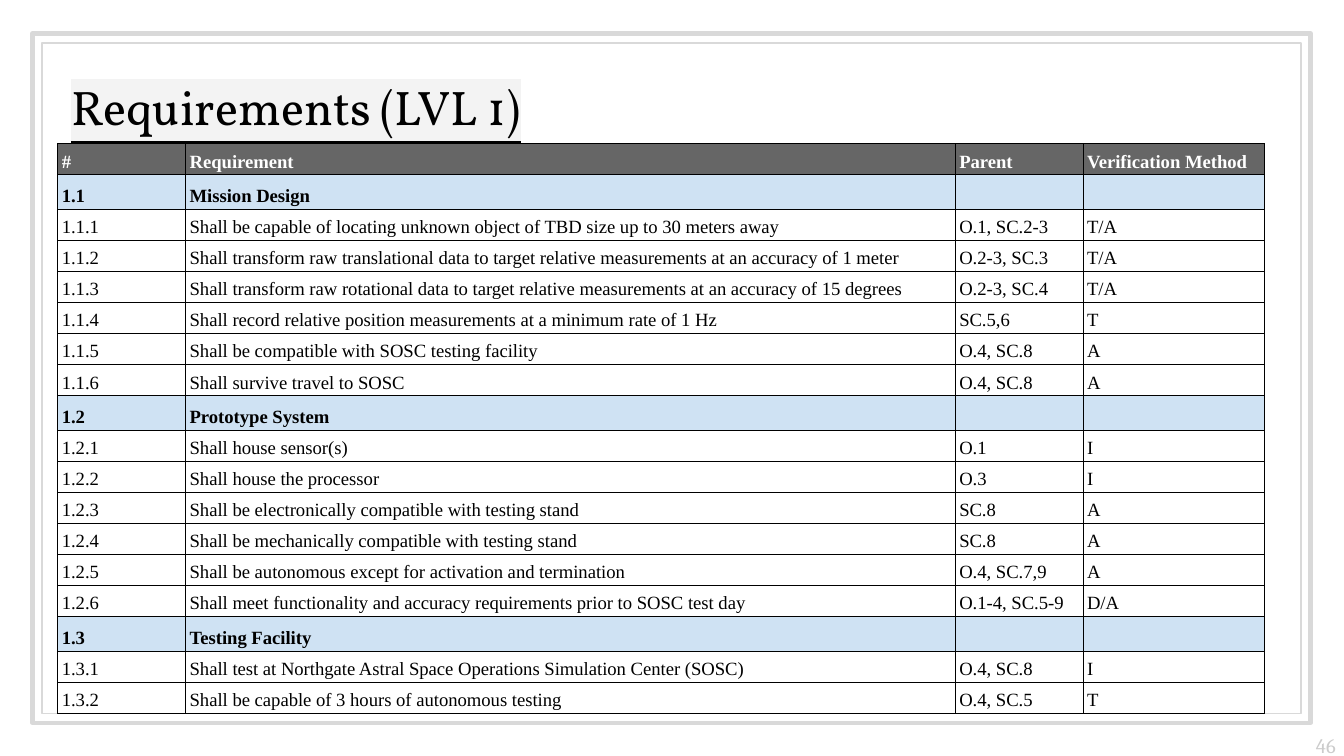
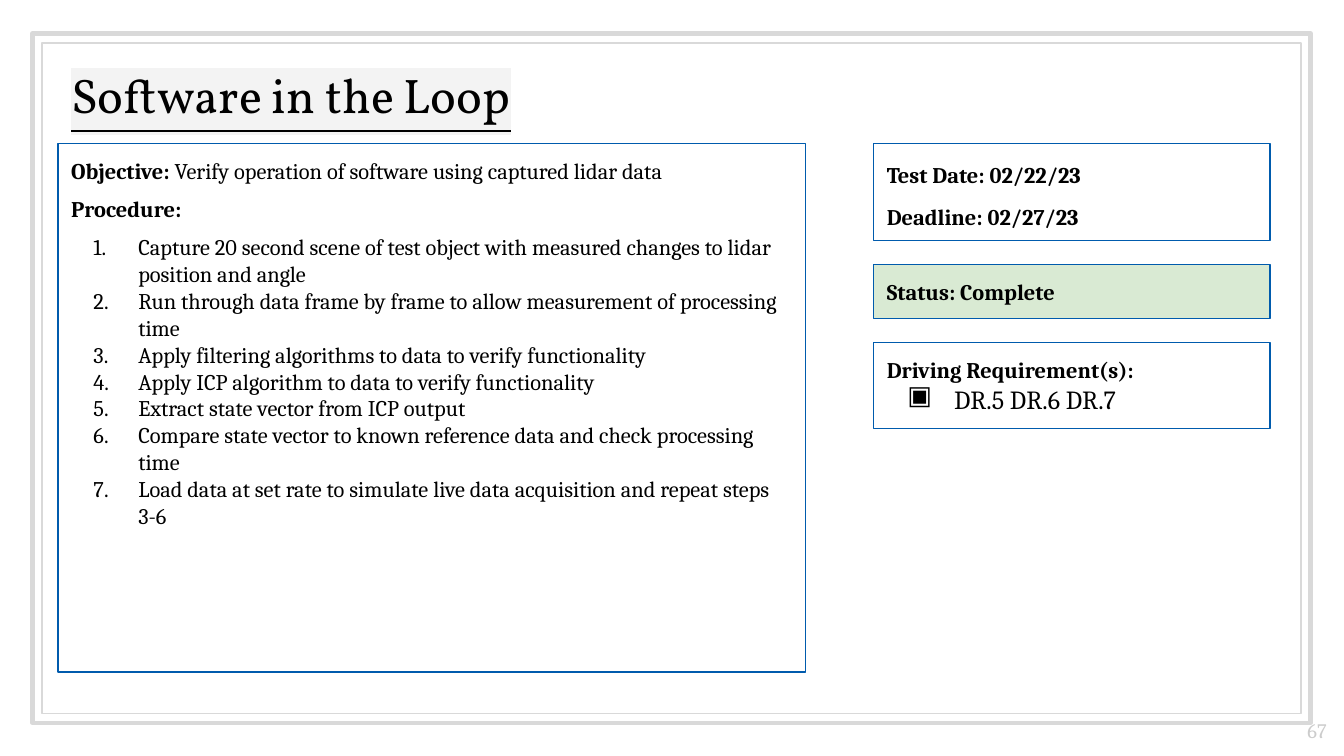
"""Build two slides of a project review: a requirements table and a test summary."""
from lxml import etree
from pptx import Presentation
from pptx.dml.color import RGBColor
from pptx.enum.shapes import MSO_SHAPE
from pptx.enum.text import MSO_ANCHOR, PP_ALIGN
from pptx.oxml.ns import qn
from pptx.util import Pt

RECTANGLE = MSO_SHAPE.RECTANGLE
TOP, MIDDLE, BOTTOM = MSO_ANCHOR.TOP, MSO_ANCHOR.MIDDLE, MSO_ANCHOR.BOTTOM
CENTER = PP_ALIGN.CENTER

COLORS = {
    "ink": "000000", "white": "FFFFFF", "frame": "D9D9D9", "mark": "F3F3F3",
    "number": "CCCCCC", "header": "666666", "section": "CFE2F3",
    "outline": "005BAD", "done": "D9EAD3",
}
TITLE_FONT, BODY_FONT, TABLE_FONT = "Vollkorn", "Cambria", "Times New Roman"
LEFT, CONTENT_TOP = 31, 77
SIDE_LEFT, SIDE_WIDTH = 468, 212.4

COLUMN_WIDTHS = [68.5, 412.3, 68.5, 97.2]
HEADINGS = ["#", "Requirement", "Parent", "Verification Method"]
SECTIONS = [
    ("Mission Design", [
        ("Shall be capable of locating unknown object of TBD size up to 30 meters away", "O.1, SC.2-3", "T/A"),
        ("Shall transform raw translational data to target relative measurements at an accuracy of 1 meter",
         "O.2-3, SC.3", "T/A"),
        ("Shall transform raw rotational data to target relative measurements at an accuracy of 15 degrees",
         "O.2-3, SC.4", "T/A"),
        ("Shall record relative position measurements at a minimum rate of 1 Hz", "SC.5,6", "T"),
        ("Shall be compatible with SOSC testing facility", "O.4, SC.8", "A"),
        ("Shall survive travel to SOSC", "O.4, SC.8", "A"),
    ]),
    ("Prototype System", [
        ("Shall house sensor(s)", "O.1", "I"),
        ("Shall house the processor", "O.3", "I"),
        ("Shall be electronically compatible with testing stand", "SC.8", "A"),
        ("Shall be mechanically compatible with testing stand", "SC.8", "A"),
        ("Shall be autonomous except for activation and termination", "O.4, SC.7,9", "A"),
        ("Shall meet functionality and accuracy requirements prior to SOSC test day", "O.1-4, SC.5-9", "D/A"),
    ]),
    ("Testing Facility", [
        ("Shall test at Northgate Astral Space Operations Simulation Center (SOSC)", "O.4, SC.8", "I"),
        ("Shall be capable of 3 hours of autonomous testing", "O.4, SC.5", "T"),
    ]),
]
STEPS = [
    "Capture 20 second scene of test object with measured changes to lidar position and angle",
    "Run through data frame by frame to allow measurement of processing time",
    "Apply filtering algorithms to data to verify functionality",
    "Apply ICP algorithm to data to verify functionality",
    "Extract state vector from ICP output",
    "Compare state vector to known reference data and check processing time",
    "Load data at set rate to simulate live data acquisition and repeat steps 3-6",
]


def rgb(name):
    return RGBColor.from_string(COLORS[name])


def add_color(parent, name):
    etree.SubElement(parent, qn("a:srgbClr"), val=COLORS[name])


class Deck:
    """Holds the shared style and the current page."""

    def __init__(self):
        self.file = Presentation()
        self.file.slide_width, self.file.slide_height = Pt(720), Pt(405)
        self.page = None

    def add_page(self, title, title_top):
        self.page = self.file.slides.add_slide(self.file.slide_layouts[6])
        self.box(17.4, 18, 684.7, 369.3, line="frame", weight=2.25)
        self.box(22.5, 23, 674.6, 359.3, line="frame")
        frame = self.text_box(LEFT, title_top, 659, 60, MIDDLE)
        span = self.span(frame.paragraphs[0], title, 26, font=TITLE_FONT)
        span.font.underline = True
        highlight = etree.Element(qn("a:highlight"))
        add_color(highlight, "mark")
        span.font._element.find(qn("a:solidFill")).addnext(highlight)

    def page_number(self, number, left, top, width):
        para = self.text_box(left, top, width, 19.5, BOTTOM).paragraphs[0]
        para.alignment = CENTER
        self.span(para, number, 11, color="number")

    def set_frame(self, frame, anchor):
        frame.word_wrap = True
        frame.vertical_anchor = anchor
        frame.margin_left = frame.margin_right = Pt(7.2)
        frame.margin_top = frame.margin_bottom = Pt(7.2)
        return frame

    def text_box(self, left, top, width, height, anchor):
        box = self.page.shapes.add_textbox(Pt(left), Pt(top), Pt(width), Pt(height))
        return self.set_frame(box.text_frame, anchor)

    def box(self, left, top, width, height, line="outline", weight=0.75, fill=None):
        box = self.page.shapes.add_shape(RECTANGLE, Pt(left), Pt(top), Pt(width), Pt(height))
        box.shadow.inherit = False
        self.fill(box, fill)
        box.line.color.rgb = rgb(line)
        box.line.width = Pt(weight)
        return self.set_frame(box.text_frame, TOP)

    def fill(self, item, color):
        if color:
            item.fill.solid()
            item.fill.fore_color.rgb = rgb(color)
        else:
            item.fill.background()

    def span(self, para, text, size=12, bold=False, color="ink", font=BODY_FONT):
        span = para.add_run()
        span.text = text
        span.font.size = Pt(size)
        span.font.bold = bold
        span.font.name = font
        span.font.color.rgb = rgb(color)
        return span

    def para(self, frame, text, size=12, bold=False, before=0, spacing=None):
        first = frame.paragraphs[0]
        para = frame.add_paragraph() if first.runs else first
        para.alignment = PP_ALIGN.LEFT
        para.space_before = Pt(before)
        if spacing:
            para.line_spacing = spacing
        self.span(para, text, size, bold)
        return para

    def bullet(self, para, hanging, symbol=None):
        props = para._p.get_or_add_pPr()
        props.set("marL", str(Pt(36)))
        props.set("indent", str(-Pt(hanging)))
        add_color(etree.SubElement(props, qn("a:buClr")), "ink")
        if symbol:
            etree.SubElement(props, qn("a:buChar"), char=symbol)
        else:
            etree.SubElement(props, qn("a:buAutoNum"), type="arabicPeriod")

    def cell(self, cell, text, bold, color, fill):
        cell.vertical_anchor = BOTTOM
        cell.margin_left = cell.margin_right = Pt(2.1)
        cell.margin_top = cell.margin_bottom = Pt(1.4)
        for side in ("a:lnL", "a:lnR", "a:lnT", "a:lnB"):
            border = etree.SubElement(cell._tc.get_or_add_tcPr(), qn(side), w=str(Pt(0.75)))
            add_color(etree.SubElement(border, qn("a:solidFill")), "ink")
        self.fill(cell, fill)
        para = cell.text_frame.paragraphs[0]
        if text:
            para.line_spacing = 1.15
            self.span(para, text, 10, bold, color, TABLE_FONT)
        else:
            etree.SubElement(para._p, qn("a:endParaRPr"), sz="1000")

    def table(self, rows, widths):
        heights = [18.7 if fill == "section" else 15.4 for _, _, _, fill in rows]
        table = self.page.shapes.add_table(
            len(rows), len(widths), Pt(LEFT), Pt(CONTENT_TOP), Pt(sum(widths)), Pt(sum(heights))).table
        table.first_row = table.horz_banding = False
        for column, width in zip(table.columns, widths):
            column.width = Pt(width)
        for row, height, (texts, bold, color, fill) in zip(table.rows, heights, rows):
            row.height = Pt(height)
            for cell, text in zip(row.cells, texts):
                self.cell(cell, text, bold, color, fill)


def requirement_rows():
    rows = [(HEADINGS, True, "white", "header")]
    for section, (name, requirements) in enumerate(SECTIONS, 1):
        rows.append(([f"1.{section}", name, "", ""], True, "ink", "section"))
        for item, requirement in enumerate(requirements, 1):
            rows.append(([f"1.{section}.{item}", *requirement], False, "ink", None))
    return rows


def requirements_page(deck):
    deck.add_page("Requirements (LVL 1)", 26.6)
    deck.page_number("46", 694.8, 393, 31)
    deck.table(requirement_rows(), COLUMN_WIDTHS)


def software_page(deck):
    deck.add_page("Software in the Loop", 20.6)
    procedure = deck.box(LEFT, CONTENT_TOP, 400.5, 283)
    objective = deck.para(procedure, "Objective:", bold=True, before=6)
    deck.span(objective, " Verify operation of software using captured lidar data")
    deck.para(procedure, "Procedure:", bold=True, before=6)
    for index, step in enumerate(STEPS):
        deck.bullet(deck.para(procedure, step, before=0 if index else 6), 24)
    deck.page_number("67", 691.2, 385, 28.8)

    dates = deck.box(SIDE_LEFT, CONTENT_TOP, SIDE_WIDTH, 52)
    for text in ("Test Date: 02/22/23", "Deadline: 02/27/23"):
        deck.para(dates, text, bold=True, before=6, spacing=1.15)
    status = deck.box(SIDE_LEFT, 141.7, SIDE_WIDTH, 29.1, fill="done")
    deck.para(status, "Status: Complete", bold=True, before=6)
    driving = deck.box(SIDE_LEFT, 183.6, SIDE_WIDTH, 46)
    deck.para(driving, "Driving Requirement(s):", bold=True, before=6)
    deck.bullet(deck.para(driving, "DR.5 DR.6 DR.7", 14), 25, "▣")


def main():
    deck = Deck()
    requirements_page(deck)
    software_page(deck)
    deck.file.save("out.pptx")


if __name__ == "__main__":
    main()
